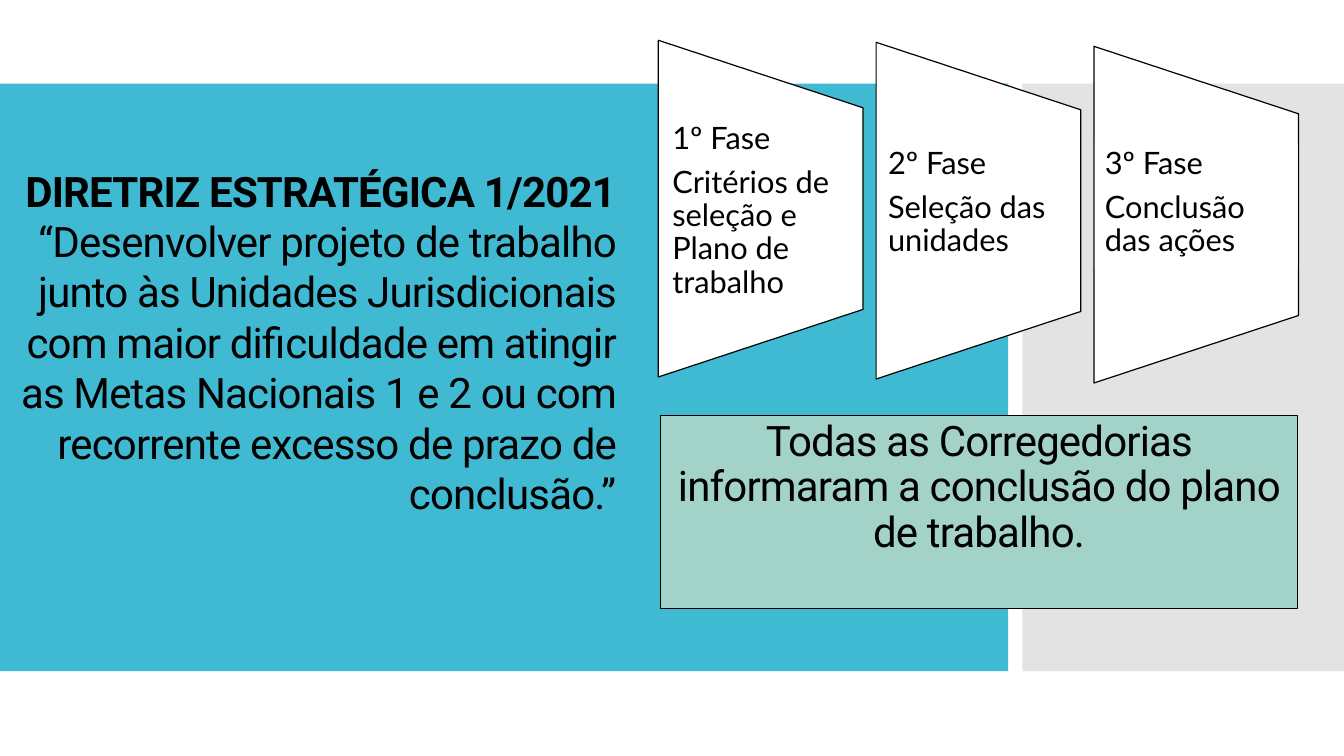
from dataclasses import dataclass

import pptx
import pptx.dml.color
import pptx.enum.shapes
import pptx.enum.text
import pptx.oxml.ns
import pptx.util
from lxml import etree

GUIDELINE = [
    "DIRETRIZ ESTRATÉGICA 1/2021",
    "“Desenvolver projeto de trabalho junto às Unidades Jurisdicionais com maior "
    "dificuldade em atingir as Metas Nacionais 1 e 2 ou com recorrente excesso de "
    "prazo de conclusão.”",
]
CONCLUSION = ["Todas as Corregedorias informaram a conclusão do plano de trabalho."]
PHASES = [
    {"lines": ["1º Fase", "Critérios de seleção e Plano de trabalho"],
     "top": 40, "label": (657, 117, 189, 190)},
    {"lines": ["2º Fase", "Seleção das unidades"],
     "top": 42, "label": (871, 142, 196, 123)},
    {"lines": ["3º Fase", "Conclusão das ações"],
     "top": 46, "label": (1086, 142, 201, 123)},
]

SLIDE_SIZE = (1333, 750)
MAIN_PANEL = (0, 83, 1000, 583)
SIDE_PANEL = (1014, 83, 319, 583)
GUIDELINE_BOX = (10, 159, 611, 414)
CONCLUSION_BOX = (655, 412, 632, 192)
FIRST_PHASE_LEFT = 653
PHASE_STEP = 216
PHASE_WIDTH = 203
PHASE_HEIGHT = 334
PHASE_SLANT = 67
EMU_PER_PX = 9144


@dataclass(frozen=True)
class Theme:
    main: str = "40BAD2"
    side: str = "C8C8C8"
    side_alpha: int = 50
    phase: str = "FFFFFF"
    conclusion: str = "A2D2C8"
    ink: str = "000000"
    heading_font: str = "Roboto"
    label_font: str = "Lato"
    heading_size: int = 30
    label_size: int = 22
    tracking: int = -60
    line_spacing: float = 0.9
    space_after: float = 0.35
    phase_line: float = 0.85
    box_line: float = 0.75


THEME = Theme()
ALIGN = pptx.enum.text.PP_ALIGN


def emu(px):
    return pptx.util.Emu(px * EMU_PER_PX)


def color(code):
    return pptx.dml.color.RGBColor.from_string(code)


def paint(shape, fill, line_width=None):
    shape.shadow.inherit = False
    shape.fill.solid()
    shape.fill.fore_color.rgb = color(fill)
    if line_width is None:
        shape.line.fill.background()
    else:
        shape.line.color.rgb = color(THEME.ink)
        shape.line.width = pptx.util.Pt(line_width)


def add_rectangle(page, area, fill, line_width=None):
    kind = pptx.enum.shapes.MSO_SHAPE.RECTANGLE
    box = page.shapes.add_shape(kind, *map(emu, area))
    paint(box, fill, line_width)
    return box


def add_side_panel(page):
    panel = add_rectangle(page, SIDE_PANEL, THEME.side)
    tint = next(panel.fill._xPr.iter(pptx.oxml.ns.qn("a:srgbClr")))
    alpha = etree.SubElement(tint, pptx.oxml.ns.qn("a:alpha"))
    alpha.set("val", str(THEME.side_alpha * 1000))


def write(box, lines, font, size, align, tracking=0, compact=True):
    frame = box.text_frame
    frame.word_wrap = True
    frame.vertical_anchor = pptx.enum.text.MSO_ANCHOR.TOP
    frame.text = "\n".join(lines)
    for para in frame.paragraphs:
        para.alignment = align
        if compact:
            para.line_spacing = THEME.line_spacing
            para.space_after = pptx.util.Pt(size * THEME.space_after)
        for span in para.runs:
            span.font.name = font
            span.font.size = pptx.util.Pt(size)
            span.font.color.rgb = color(THEME.ink)
            if tracking:
                span.font._element.set("spc", str(tracking))


def add_phase_outline(page, left, top):
    right, bottom = left + PHASE_WIDTH, top + PHASE_HEIGHT
    builder = page.shapes.build_freeform(left, bottom, scale=EMU_PER_PX)
    builder.add_line_segments(
        [(left, top), (right, top + PHASE_SLANT), (right, bottom - PHASE_SLANT)],
        close=True,
    )
    paint(builder.convert_to_shape(), THEME.phase, THEME.phase_line)


def main():
    deck = pptx.Presentation()
    deck.slide_width, deck.slide_height = map(emu, SLIDE_SIZE)
    page = deck.slides.add_slide(deck.slide_layouts[6])

    add_rectangle(page, MAIN_PANEL, THEME.main)
    add_side_panel(page)

    guideline = page.shapes.add_textbox(*map(emu, GUIDELINE_BOX))
    write(guideline, GUIDELINE, THEME.heading_font, THEME.heading_size,
          ALIGN.RIGHT, THEME.tracking, compact=False)
    guideline.text_frame.paragraphs[0].runs[0].font.bold = True

    for index, phase in enumerate(PHASES):
        add_phase_outline(page, FIRST_PHASE_LEFT + index * PHASE_STEP, phase["top"])
    for phase in PHASES:
        label = add_rectangle(page, phase["label"], THEME.phase)
        write(label, phase["lines"], THEME.label_font, THEME.label_size, ALIGN.LEFT)

    conclusion = add_rectangle(page, CONCLUSION_BOX, THEME.conclusion, THEME.box_line)
    write(conclusion, CONCLUSION, THEME.heading_font, THEME.heading_size,
          ALIGN.CENTER, THEME.tracking)

    deck.save("out.pptx")


if __name__ == "__main__":
    main()
